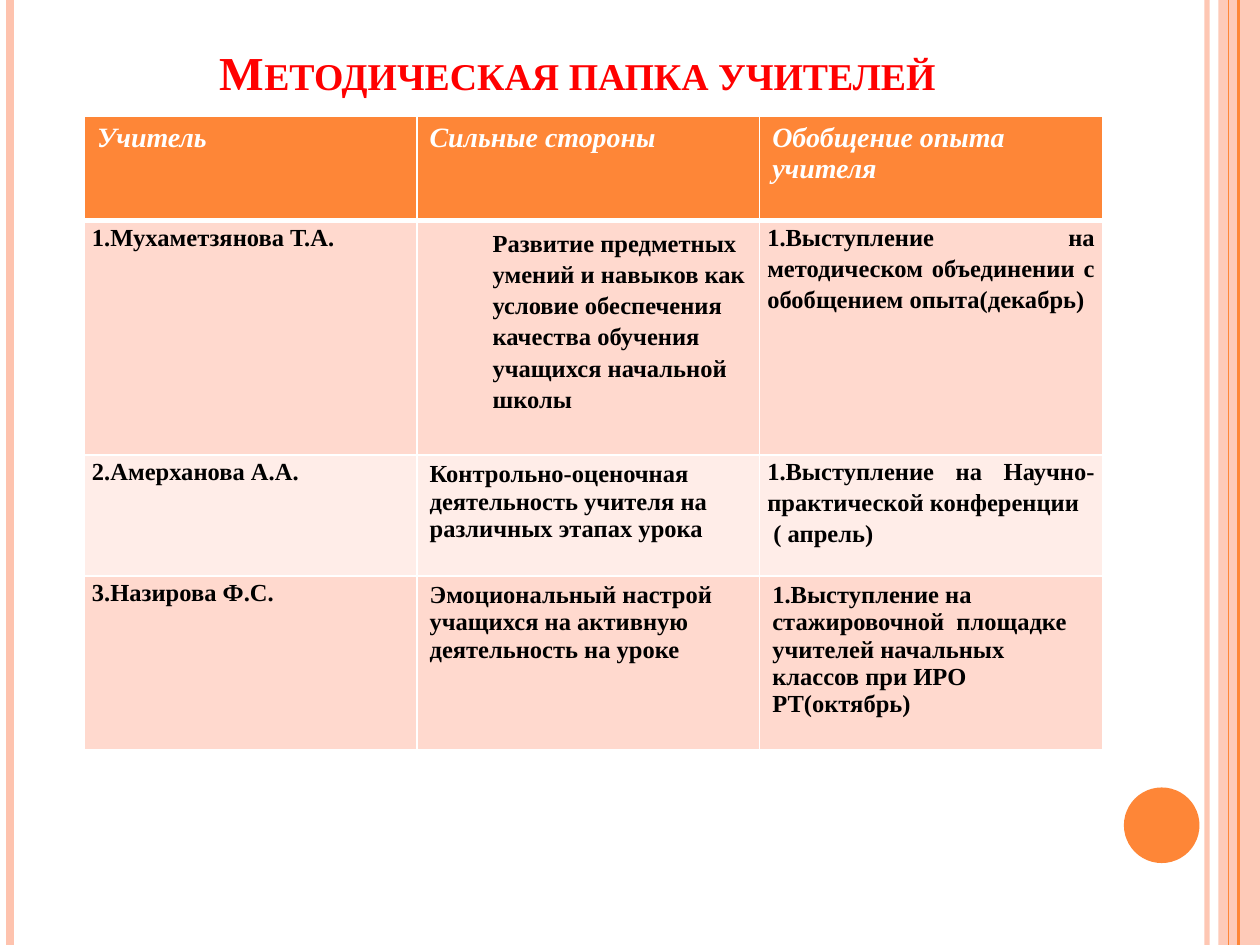
from lxml import etree
from pptx import Presentation
from pptx.dml.color import RGBColor
from pptx.enum.shapes import MSO_CONNECTOR as Connector, MSO_SHAPE as Shape
from pptx.enum.text import MSO_ANCHOR as Anchor, MSO_AUTO_SIZE as AutoSize, PP_ALIGN as Align
from pptx.oxml import parse_xml
from pptx.oxml.ns import nsdecls, qn
from pptx.util import Inches, Pt


def color(value):
    return RGBColor.from_string(value)


def write(para, text, size=14, fill="000000", italic=False, align=Align.LEFT,
          spacing=None, indent=0, small_caps=False):
    para.alignment = align
    if spacing:
        para.line_spacing = spacing
    if indent:
        properties = para._p.get_or_add_pPr()
        properties.set("marL", str(Inches(indent)))
        properties.set("indent", "0")
    span = para.add_run()
    span.text = text
    span.font.name = "Times New Roman"
    span.font.size = Pt(size)
    span.font.bold = True
    span.font.italic = italic
    span.font.color.rgb = color(fill)
    if small_caps:
        span._r.get_or_add_rPr().set("cap", "small")


ORANGE, PEACH, WHITE = "FE8637", "FEC3AE", "FFFFFF"

deck = Presentation()
deck.slide_width, deck.slide_height = Inches(10), Inches(7.5)
page = deck.slides.add_slide(deck.slide_layouts[5])
page.background.fill.solid()
page.background.fill.fore_color.rgb = color(WHITE)

shapes = [
    (Shape.RECTANGLE, 9.67, 0, 0.33, 7.5, PEACH, 87),
    (Shape.OVAL, 8.92, 6.25, 0.6, 0.6, ORANGE, 100),
]
for kind, left, top, width, height, fill, opacity in shapes:
    shape = page.shapes.add_shape(kind, Inches(left), Inches(top), Inches(width), Inches(height))
    shape.shadow.inherit = False
    shape.fill.solid()
    shape.fill.fore_color.rgb = color(fill)
    shape.line.fill.background()
    if opacity < 100:
        tint = shape._element.spPr.find(".//" + qn("a:srgbClr"))
        etree.SubElement(tint, qn("a:alpha")).set("val", str(opacity * 1000))

stripes = [(9.58, PEACH, 3, 93), (0.08, PEACH, 4.5, 100), (9.83, ORANGE, 1.5, 100), (9.75, ORANGE, 0.75, 100)]
for left, tone, weight, opacity in stripes:
    stripe = page.shapes.add_connector(Connector.STRAIGHT, Inches(left), 0, Inches(left), Inches(7.5))
    stripe.line.color.rgb = color(tone)
    stripe.line.width = Pt(weight)
    properties = stripe._element.spPr
    if opacity < 100:
        tint = properties.find(".//" + qn("a:srgbClr"))
        etree.SubElement(tint, qn("a:alpha")).set("val", str(opacity * 1000))
    etree.SubElement(properties, qn("a:effectLst"))

title = page.shapes.title
title.left, title.top, title.width, title.height = Inches(0.5), Inches(0.3), Inches(8.17), Inches(0.54)
title.text_frame.auto_size = AutoSize.NONE
title.text_frame.vertical_anchor = Anchor.BOTTOM
write(title.text_frame.paragraphs[0], "Методическая папка учителей", size=27,
      fill="FF0000", align=Align.CENTER, small_caps=True)

header = {"size": 16, "fill": WHITE, "italic": True}
tight = {"align": Align.JUSTIFY, "spacing": 1.15}
indented = {"spacing": 1.15, "indent": 0.5}
plain = {}
rows = [
    (0.83, ORANGE, [("Учитель", header), ("Сильные стороны", header), ("Обобщение опыта учителя", header)]),
    (1.86, "FFD9CE", [
        ("1.Мухаметзянова Т.А.", tight),
        ("Развитие предметных умений и навыков как условие обеспечения качества обучения "
         "учащихся начальной школы", indented),
        ("1.Выступление на методическом объединении с обобщением опыта(декабрь)", tight)]),
    (0.96, "FFEDE8", [
        ("2.Амерханова А.А.", tight),
        ("Контрольно-оценочная деятельность учителя на различных этапах урока", plain),
        ("1.Выступление на Научно- практической конференции\n ( апрель)", tight)]),
    (1.38, "FFD9CE", [
        ("3.Назирова Ф.С.", tight),
        ("Эмоциональный настрой учащихся на активную деятельность на уроке", plain),
        ("1.Выступление на стажировочной  площадке учителей начальных классов при ИРО РТ(октябрь)", plain)]),
]
widths = [2.64, 2.72, 2.72]
table = page.shapes.add_table(len(rows), len(widths), Inches(0.67), Inches(0.92),
                              Inches(sum(widths)), Inches(sum(row[0] for row in rows))).table
for column, width in zip(table.columns, widths):
    column.width = Inches(width)

for r, (height, fill, entries) in enumerate(rows):
    table.rows[r].height = Inches(height)
    for c, (text, style) in enumerate(entries):
        cell = table.cell(r, c)
        if style is tight:
            cell.margin_left = cell.margin_right = Inches(0.06)
            cell.margin_top = cell.margin_bottom = 0
        for side in "LRTB":
            weight = 3 if (r, side) in [(0, "B"), (1, "T")] else 1
            cell._tc.get_or_add_tcPr().append(parse_xml(
                f'<a:ln{side} {nsdecls("a")} w="{Pt(weight)}"><a:solidFill>'
                f'<a:srgbClr val="{WHITE}"/></a:solidFill></a:ln{side}>'))
        cell.fill.solid()
        cell.fill.fore_color.rgb = color(fill)
        for i, line in enumerate(text.split("\n")):
            frame = cell.text_frame
            write(frame.add_paragraph() if i else frame.paragraphs[0], line, **style)

deck.save("out.pptx")
